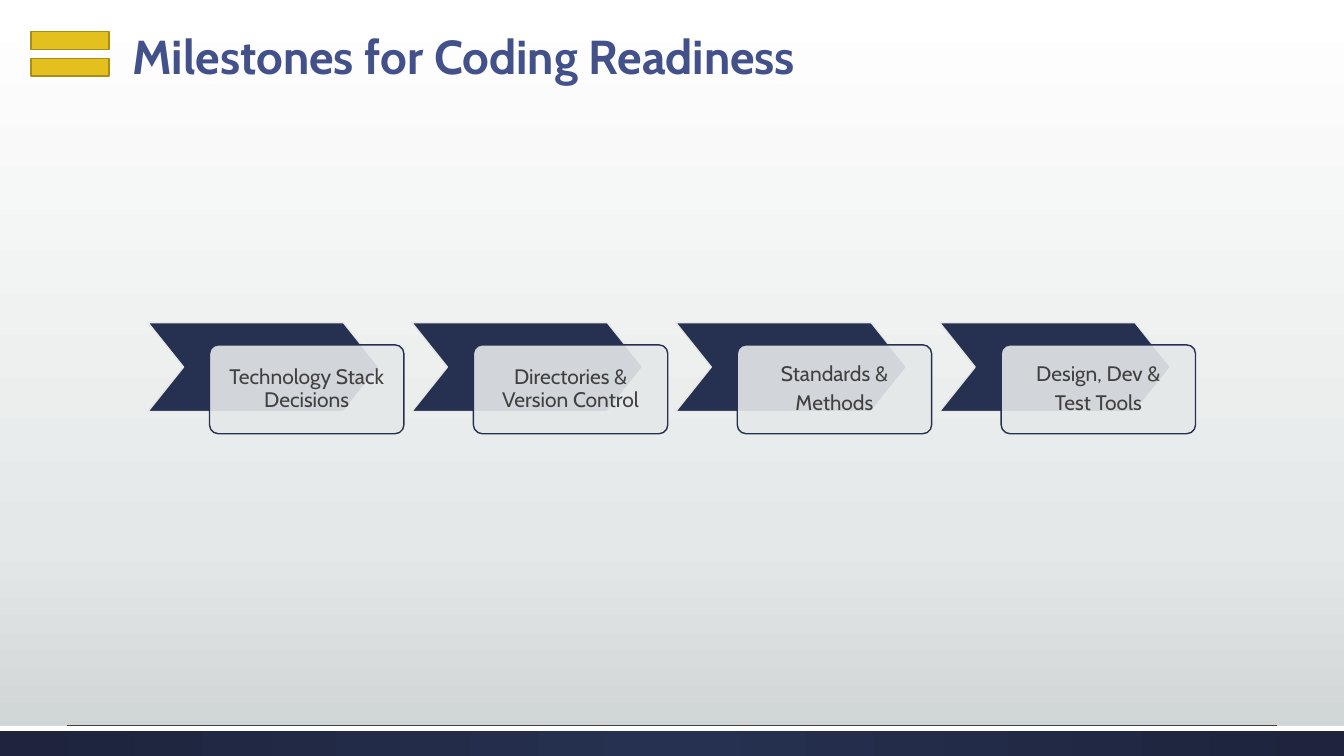
from lxml.etree import SubElement
from pptx import Presentation
from pptx.dml.color import RGBColor
from pptx.enum.shapes import MSO_CONNECTOR, MSO_SHAPE
from pptx.enum.text import MSO_ANCHOR, PP_ALIGN
from pptx.oxml.ns import qn
from pptx.util import Cm, Pt

# Content
TITLE = "Milestones for Coding Readiness"
MILESTONES = [
    ["Technology Stack Decisions"],
    ["Directories & Version Control"],
    ["Standards &", "Methods"],
    ["Design, Dev &", "Test Tools"],
]

# Style
FONT = "Cabin"
COLORS = {
    "navy": "263050", "deep": "1D243C", "title": "42518A", "text": "404040",
    "gold": "E3C01E", "bronze": "A88E16",
    "white": "FFFFFF", "mist": "E5E8E8", "gray": "CDD2D2",
}
PAGE_GRADIENT = [(0, "white"), (72, "mist"), (100, "gray")]
FOOTER_GRADIENT = [(0, "deep"), (50, "navy"), (100, "deep")]

# Layout in centimetres
PAGE_WIDTH, PAGE_HEIGHT = 33.87, 19.05
FOOTER_TOP = 18.29
RULE_MARGIN, RULE_TOP = 1.69, 18.27
ROW_LEFT, ROW_TOP, STEP = 3.73, 8.13, 6.65
CHEVRON_WIDTH, CARD_WIDTH, STEP_HEIGHT = 5.82, 4.9, 2.24
CARD_SHIFT_X, CARD_SHIFT_Y = 1.55, 0.56


def rgb(name):
    return RGBColor.from_string(COLORS[name])


def paint_gradient(element, fill, stops, angle):
    fill.gradient()
    fill.gradient_angle = angle
    stop_list = next(element.iter(qn("a:gsLst")))
    for stop in list(stop_list):
        stop_list.remove(stop)
    for percent, color in stops:
        stop = SubElement(stop_list, qn("a:gs"), pos=str(percent * 1000))
        SubElement(stop, qn("a:srgbClr"), val=COLORS[color])


def add_block(page, kind, left, top, width, height, fill=None, line=None,
              adjust=None, opacity=None):
    block = page.shapes.add_shape(kind, Cm(left), Cm(top), Cm(width), Cm(height))
    block.shadow.inherit = False
    if fill:
        block.fill.solid()
        block.fill.fore_color.rgb = rgb(fill)
    if line:
        block.line.color.rgb = rgb(line)
        block.line.width = Pt(1)
    else:
        block.line.fill.background()
    if adjust is not None:
        block.adjustments[0] = adjust
    if opacity is not None:
        color = block._element.spPr.find(qn("a:solidFill"))[0]
        SubElement(color, qn("a:alpha"), val=str(opacity * 1000))
    return block


def write_text(box, lines, size, color, bold=False, align=PP_ALIGN.LEFT,
               inset=0.25, space_after=0):
    frame = box.text_frame
    frame.word_wrap = True
    frame.vertical_anchor = MSO_ANCHOR.MIDDLE
    frame.margin_left = frame.margin_right = Cm(inset)
    frame.margin_top = frame.margin_bottom = Cm(inset)
    for index, line in enumerate(lines):
        para = frame.add_paragraph() if index else frame.paragraphs[0]
        para.alignment = align
        para.line_spacing = 0.9
        para.space_after = Pt(space_after)
        span = para.add_run()
        span.text = line
        span.font.name = FONT
        span.font.size = Pt(size)
        span.font.bold = bold
        span.font.color.rgb = rgb(color)


def main():
    deck = Presentation()
    deck.slide_width, deck.slide_height = Cm(PAGE_WIDTH), Cm(PAGE_HEIGHT)
    page = deck.slides.add_slide(deck.slide_layouts[6])
    paint_gradient(page._element, page.background.fill, PAGE_GRADIENT, 270)

    # Footer band with its white edge and thin rule
    band = add_block(page, MSO_SHAPE.RECTANGLE, 0, FOOTER_TOP,
                     PAGE_WIDTH, PAGE_HEIGHT - FOOTER_TOP)
    paint_gradient(band._element, band.fill, FOOTER_GRADIENT, 0)
    add_block(page, MSO_SHAPE.RECTANGLE, 0, FOOTER_TOP, PAGE_WIDTH, 0.13,
              fill="white")
    rule = page.shapes.add_connector(
        MSO_CONNECTOR.STRAIGHT, Cm(RULE_MARGIN), Cm(RULE_TOP),
        Cm(PAGE_WIDTH - RULE_MARGIN), Cm(RULE_TOP))
    rule.line.color.rgb = rgb("text")
    rule.line.width = Pt(0.75)
    SubElement(rule._element.spPr, qn("a:effectLst"))

    # Title with its equals sign
    add_block(page, MSO_SHAPE.MATH_EQUAL, 0.43, 0.41, 2.67, 1.9,
              fill="gold", line="bronze")
    heading = page.shapes.add_textbox(Cm(3.1), Cm(0.64), Cm(29.92), Cm(1.68))
    write_text(heading, [TITLE], size=34, color="title", bold=True)

    # Row of milestones: a chevron behind each card
    for index, lines in enumerate(MILESTONES):
        left = ROW_LEFT + index * STEP
        add_block(page, MSO_SHAPE.CHEVRON, left, ROW_TOP, CHEVRON_WIDTH,
                  STEP_HEIGHT, fill="navy", line="mist", adjust=0.4)
        card = add_block(page, MSO_SHAPE.ROUNDED_RECTANGLE,
                         left + CARD_SHIFT_X, ROW_TOP + CARD_SHIFT_Y,
                         CARD_WIDTH, STEP_HEIGHT, fill="mist", line="navy",
                         adjust=0.1, opacity=90)
        write_text(card, lines, size=15, color="text", align=PP_ALIGN.CENTER,
                   inset=0.3, space_after=5)

    deck.save("out.pptx")


if __name__ == "__main__":
    main()
